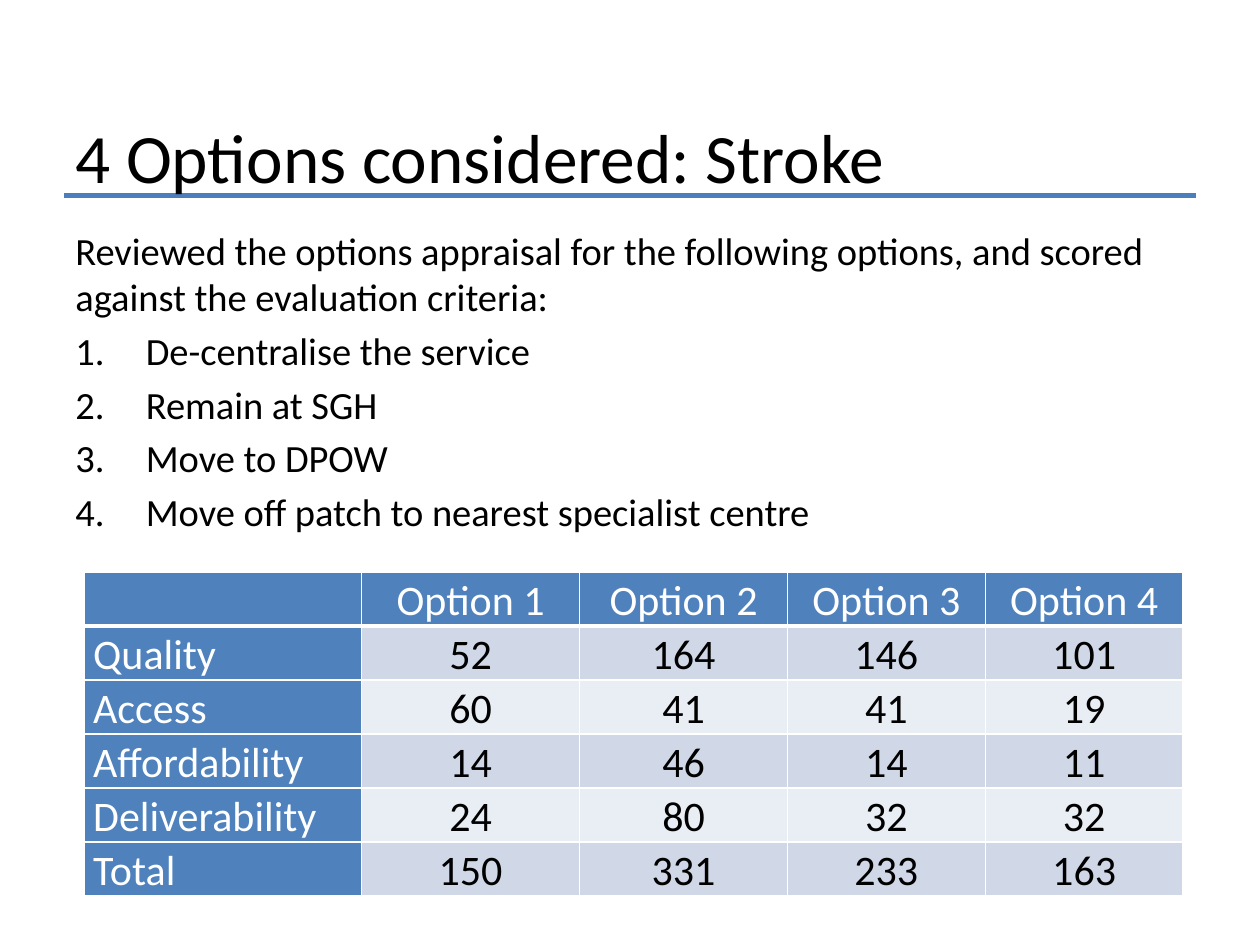
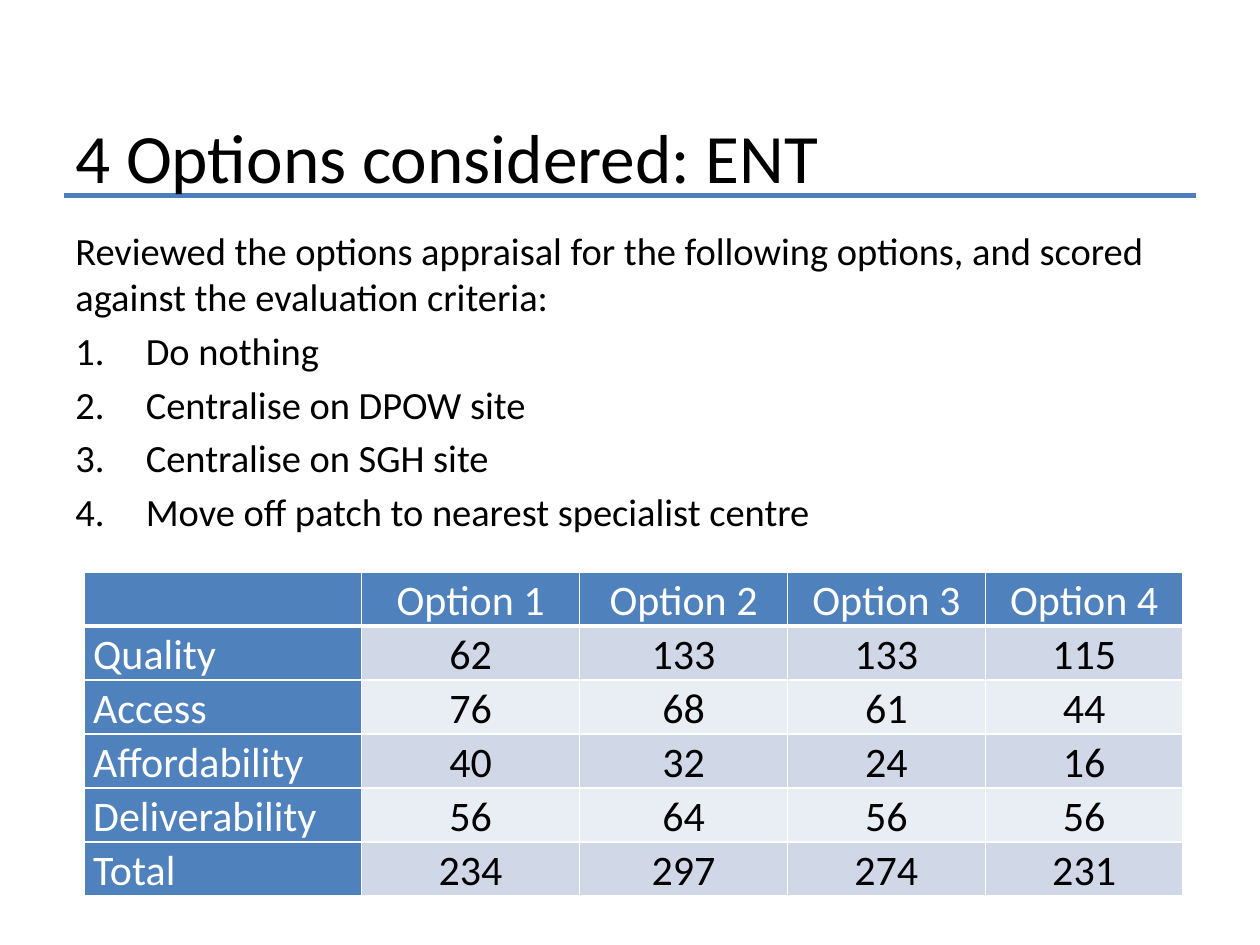
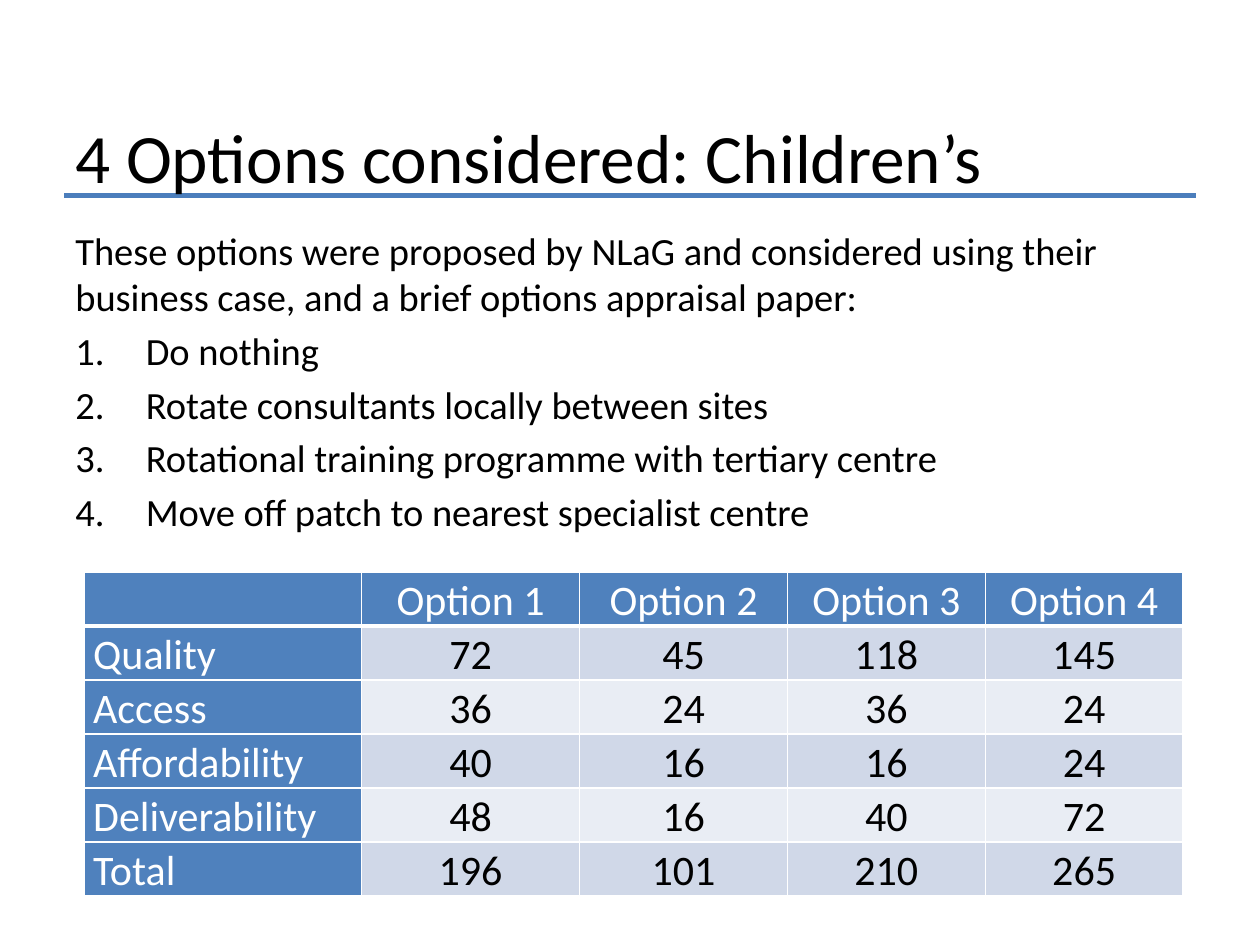
import pptx
import pptx.dml.color
import pptx.enum.shapes
import pptx.enum.text
import pptx.oxml.ns
import pptx.util
from lxml import etree
from pptx.util import Inches, Pt

RGBColor = pptx.dml.color.RGBColor
BLACK = RGBColor(0x00, 0x00, 0x00)
WHITE = RGBColor(0xFF, 0xFF, 0xFF)
RULE_BLUE = RGBColor(0x4B, 0x7E, 0xBC)
HEADING_BLUE = RGBColor(0x4F, 0x81, 0xBD)
BANDS = (RGBColor(0xD0, 0xD8, 0xE8), RGBColor(0xE9, 0xED, 0xF4))

TITLE_FONT = {"name": "Calibri", "size": Pt(39.6)}
BODY_FONT = {"name": "Calibri", "size": Pt(22)}
CELL_FONT = {"name": "Calibri", "size": Pt(24)}
CELL_MARGINS = {
    "margin_left": Inches(0.07),
    "margin_right": Inches(0.07),
    "margin_top": 0,
    "margin_bottom": 0,
}

TITLE_BOX = (0.5, 0.92, 9, 0.64)
OPTIONS_BOX = (0.5, 1.75, 9, 4.95)
SCORES_BOX = (0.67, 4.54, 8.72, 2.46)
COLUMN_WIDTHS = (2.2, 1.73, 1.65, 1.57, 1.57)
NUMBER_INDENT = Inches(0.56)

HEADINGS = ("", "Option 1", "Option 2", "Option 3", "Option 4")
CRITERIA = ("Quality", "Access", "Affordability", "Deliverability", "Total")
SCORED_INTRO = (
    "Reviewed the options appraisal for the following options, "
    "and scored against the evaluation criteria:"
)
PROPOSED_INTRO = (
    "These options were proposed by NLaG and considered using their "
    "business case, and a brief options appraisal paper:"
)
OFF_PATCH = "Move off patch to nearest specialist centre"

REVIEWS = (
    {
        "service": "Stroke",
        "intro": SCORED_INTRO,
        "options": ("De-centralise the service", "Remain at SGH", "Move to DPOW", OFF_PATCH),
        "scores": (
            (52, 164, 146, 101),
            (60, 41, 41, 19),
            (14, 46, 14, 11),
            (24, 80, 32, 32),
            (150, 331, 233, 163),
        ),
    },
    {
        "service": "ENT",
        "intro": SCORED_INTRO,
        "options": ("Do nothing", "Centralise on DPOW site", "Centralise on SGH site", OFF_PATCH),
        "scores": (
            (62, 133, 133, 115),
            (76, 68, 61, 44),
            (40, 32, 24, 16),
            (56, 64, 56, 56),
            (234, 297, 274, 231),
        ),
    },
    {
        "service": "Children’s",
        "intro": PROPOSED_INTRO,
        "options": (
            "Do nothing",
            "Rotate consultants locally between sites",
            "Rotational training programme with tertiary centre",
            OFF_PATCH,
        ),
        "scores": (
            (72, 45, 118, 145),
            (36, 24, 36, 24),
            (40, 16, 16, 24),
            (48, 16, 40, 72),
            (196, 101, 210, 265),
        ),
    },
)


def apply_format(target, values):
    """Set each attribute in values on target."""
    for attribute, value in values.items():
        setattr(target, attribute, value)


def write(paragraph, text, font, colour=BLACK):
    """Add one formatted run to a paragraph."""
    run = paragraph.add_run()
    run.text = text
    apply_format(run.font, font)
    run.font.color.rgb = colour


def add_text_frame(slide, box):
    """Add a wrapping text box and return its frame."""
    frame = slide.shapes.add_textbox(*map(Inches, box)).text_frame
    frame.word_wrap = True
    return frame


def add_title(slide, box, text):
    """Draw the rule at the foot of the box and the title over it."""
    left, top, width, height = box
    rule_y = Inches(top + height - 0.01)
    rule = slide.shapes.add_connector(
        pptx.enum.shapes.MSO_CONNECTOR.STRAIGHT,
        Inches(left + 0.01), rule_y, Inches(left + width - 0.01), rule_y,
    )
    rule.line.color.rgb = RULE_BLUE
    rule.line.width = Pt(3)
    etree.SubElement(rule._element.spPr, pptx.oxml.ns.qn("a:effectLst"))
    frame = add_text_frame(slide, box)
    frame.vertical_anchor = pptx.enum.text.MSO_ANCHOR.MIDDLE
    write(frame.paragraphs[0], text, TITLE_FONT)


def add_options(slide, box, intro, options):
    """Write the introduction and the numbered options."""
    frame = add_text_frame(slide, box)
    write(frame.paragraphs[0], intro, BODY_FONT)
    for option in options:
        paragraph = frame.add_paragraph()
        properties = paragraph._p.get_or_add_pPr()
        properties.set("marL", str(NUMBER_INDENT))
        properties.set("indent", str(-NUMBER_INDENT))
        etree.SubElement(properties, pptx.oxml.ns.qn("a:buAutoNum"), type="arabicPeriod")
        paragraph.space_before = Pt(4.4)
        write(paragraph, option, BODY_FONT)


def add_borders(cell, top, bottom):
    """Give a cell white borders with the stated top and bottom widths."""
    properties = cell._tc.get_or_add_tcPr()
    for side, width in {"L": 1, "R": 1, "T": top, "B": bottom}.items():
        border = etree.SubElement(properties, pptx.oxml.ns.qn(f"a:ln{side}"), w=str(Pt(width)))
        fill = etree.SubElement(border, pptx.oxml.ns.qn("a:solidFill"))
        etree.SubElement(fill, pptx.oxml.ns.qn("a:srgbClr"), val=str(WHITE))


def add_scores(slide, box, scores):
    """Add the table of scores by criterion and option."""
    rows = [HEADINGS] + [(name, *values) for name, values in zip(CRITERIA, scores)]
    table = slide.shapes.add_table(len(rows), len(HEADINGS), *map(Inches, box)).table
    for column, width in zip(table.columns, COLUMN_WIDTHS):
        column.width = Inches(width)
    for r, row in enumerate(rows):
        for c, value in enumerate(row):
            cell = table.cell(r, c)
            is_heading = r == 0 or c == 0
            add_borders(cell, top=3 if r == 1 else 1, bottom=3 if r == 0 else 1)
            cell.fill.solid()
            cell.fill.fore_color.rgb = HEADING_BLUE if is_heading else BANDS[(r - 1) % 2]
            apply_format(cell, CELL_MARGINS)
            if value == "":
                continue
            paragraph = cell.text_frame.paragraphs[0]
            paragraph.line_spacing = 1.07
            if c > 0:
                paragraph.alignment = pptx.enum.text.PP_ALIGN.CENTER
            write(paragraph, str(value), CELL_FONT, WHITE if is_heading else BLACK)


def add_review_slide(deck, review):
    """Add the slide that reviews one service."""
    slide = deck.slides.add_slide(deck.slide_layouts[6])
    add_title(slide, TITLE_BOX, f"4 Options considered: {review['service']}")
    add_options(slide, OPTIONS_BOX, review["intro"], review["options"])
    add_scores(slide, SCORES_BOX, review["scores"])


def main():
    """Build and save the deck."""
    deck = pptx.Presentation()
    deck.slide_width = Inches(10)
    deck.slide_height = Inches(7.5)
    for review in REVIEWS:
        add_review_slide(deck, review)
    deck.save("out.pptx")


if __name__ == "__main__":
    main()
